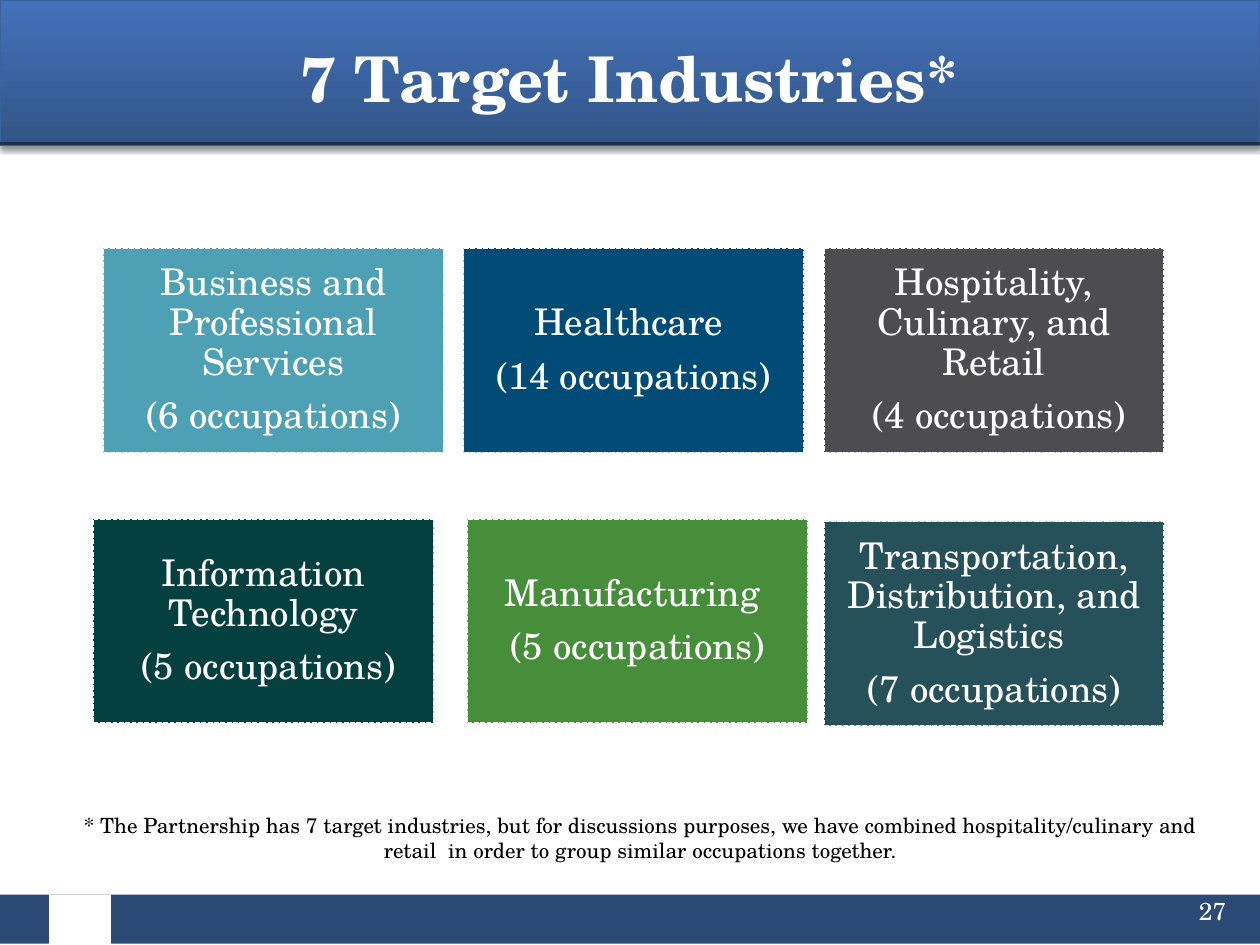
from pptx import Presentation, util as u
from pptx.dml.color import RGBColor
from pptx.enum import dml, shapes, text
from pptx.oxml import parse_xml
from pptx.oxml.ns import nsdecls

FONT = "TeX Gyre Schola"
WHITE, BLACK = RGBColor(255, 255, 255), RGBColor(0, 0, 0)
NAVY, DARK_NAVY = RGBColor(0x2B, 0x4A, 0x76), RGBColor(0x1C, 0x31, 0x4E)
BLUE_TOP, BLUE_BOTTOM = RGBColor(0x43, 0x72, 0xBA), RGBColor(0x31, 0x55, 0x87)
BLUE_EDGE = RGBColor(0x39, 0x63, 0x9D)
TEAL, OCEAN = RGBColor(0x4E, 0xA1, 0xB4), RGBColor(0x00, 0x4C, 0x77)
GRAY, PINE = RGBColor(0x4D, 0x4D, 0x4F), RGBColor(0x05, 0x40, 0x40)
GREEN, SLATE = RGBColor(0x46, 0x8E, 0x3A), RGBColor(0x26, 0x51, 0x5B)

# Content
TITLE = "7 Target Industries*"
PAGE = "27"
NOTE = ("* The Partnership has 7 target industries, but for discussions purposes, "
        "we have combined hospitality/culinary and retail  in order to group "
        "similar occupations together.")
# industry, occupations, colour, nudge from the grid (x, y)
INDUSTRIES = [
    ("Business and Professional Services", "(6 occupations)", TEAL, (0, 0)),
    ("Healthcare ", "(14 occupations)", OCEAN, (0, 0)),
    ("Hospitality, Culinary, and Retail", " (4 occupations)", GRAY, (0, 0)),
    ("Information Technology", " (5 occupations)", PINE, (-0.08, 0)),
    ("Manufacturing ", "(5 occupations)", GREEN, (0.03, 0)),
    ("Transportation, Distribution, and Logistics ", "(7 occupations)", SLATE, (0, 0.02)),
]

# Grid, in inches
COLS = 3
LEFT, TOP = 0.82, 1.97
CARD_W, CARD_H = 2.7, 1.62
STEP_X, STEP_Y = 2.86, 2.15

prs = Presentation()
prs.slide_width, prs.slide_height = u.Inches(10), u.Inches(7.5)
s = prs.slides.add_slide(prs.slide_layouts[5])


def box(x, y, w, h, fill=None):
    sp = s.shapes.add_shape(shapes.MSO_SHAPE.RECTANGLE, *map(u.Inches, (x, y, w, h)))
    sp.shadow.inherit = False
    sp.line.fill.background()
    if fill is not None:
        sp.fill.solid()
        sp.fill.fore_color.rgb = fill
    return sp


def write(tf, lines, size, color, align, bold=False):
    tf.word_wrap = True
    tf.text = "\n".join(lines)
    for p in tf.paragraphs:
        p.alignment = align
        p.font.name, p.font.size, p.font.bold = FONT, u.Pt(size), bold
        p.font.color.rgb = color


def label(x, y, w, h, words, size, color, align):
    tb = s.shapes.add_textbox(*map(u.Inches, (x, y, w, h)))
    write(tb.text_frame, [words], size, color, align)


def rule(y, color, width):
    ln = s.shapes.add_connector(shapes.MSO_CONNECTOR.STRAIGHT,
                                0, u.Inches(y), prs.slide_width, u.Inches(y))
    ln.line.color.rgb, ln.line.width = color, u.Pt(width)
    ln._element.spPr.append(parse_xml(f"<a:effectLst {nsdecls('a')}/>"))


# Footer bar and header band
box(0, 7.1, 10, 0.39, NAVY)
band = box(0, 0, 10, 1.15)
band.fill.gradient()
band.fill.gradient_angle = 270
for stop, color, pos in zip(band.fill.gradient_stops, (BLUE_TOP, BLUE_BOTTOM), (0, 1)):
    stop.color.rgb, stop.position = color, pos
band.line.color.rgb, band.line.width = BLUE_EDGE, u.Pt(1)
band._element.spPr.find("{*}effectLst").append(parse_xml(
    f'<a:outerShdw {nsdecls("a")} blurRad="38100" dist="25400" dir="5400000" rotWithShape="0">'
    '<a:srgbClr val="000000"><a:alpha val="45000"/></a:srgbClr></a:outerShdw>'))
rule(1.14, BLACK, 1)
rule(1.14, DARK_NAVY, 2)
box(0.39, 7.1, 0.49, 0.4, WHITE)

# Title, brought in front of the band
title = s.shapes.title
title.left, title.top, title.width, title.height = map(u.Inches, (1.1, 0.04, 7.79, 1.15))
write(title.text_frame, [TITLE], 36, WHITE, text.PP_ALIGN.CENTER, bold=True)
title.text_frame.vertical_anchor = text.MSO_ANCHOR.MIDDLE
title._element.getparent().append(title._element)

label(7.75, 7.06, 2.08, 0.48, PAGE, 14, WHITE, text.PP_ALIGN.RIGHT)

# Industry cards
for i, (name, count, color, (dx, dy)) in enumerate(INDUSTRIES):
    row, col = divmod(i, COLS)
    card = box(LEFT + col * STEP_X + dx, TOP + row * STEP_Y + dy, CARD_W, CARD_H, color)
    card.line.color.rgb, card.line.width = WHITE, u.Pt(0.9)
    card.line.dash_style = dml.MSO_LINE.SQUARE_DOT
    tf = card.text_frame
    write(tf, [name, count], 21, WHITE, text.PP_ALIGN.CENTER)
    tf.vertical_anchor = text.MSO_ANCHOR.MIDDLE
    tf.margin_left = tf.margin_right = tf.margin_top = tf.margin_bottom = u.Inches(0.09)
    for p in tf.paragraphs:
        p.line_spacing = 0.9
    tf.paragraphs[0].space_after = u.Pt(8)

# Footnote
label(0.42, 6.4, 9.33, 0.5, NOTE, 12, BLACK, text.PP_ALIGN.CENTER)

prs.save("out.pptx")
